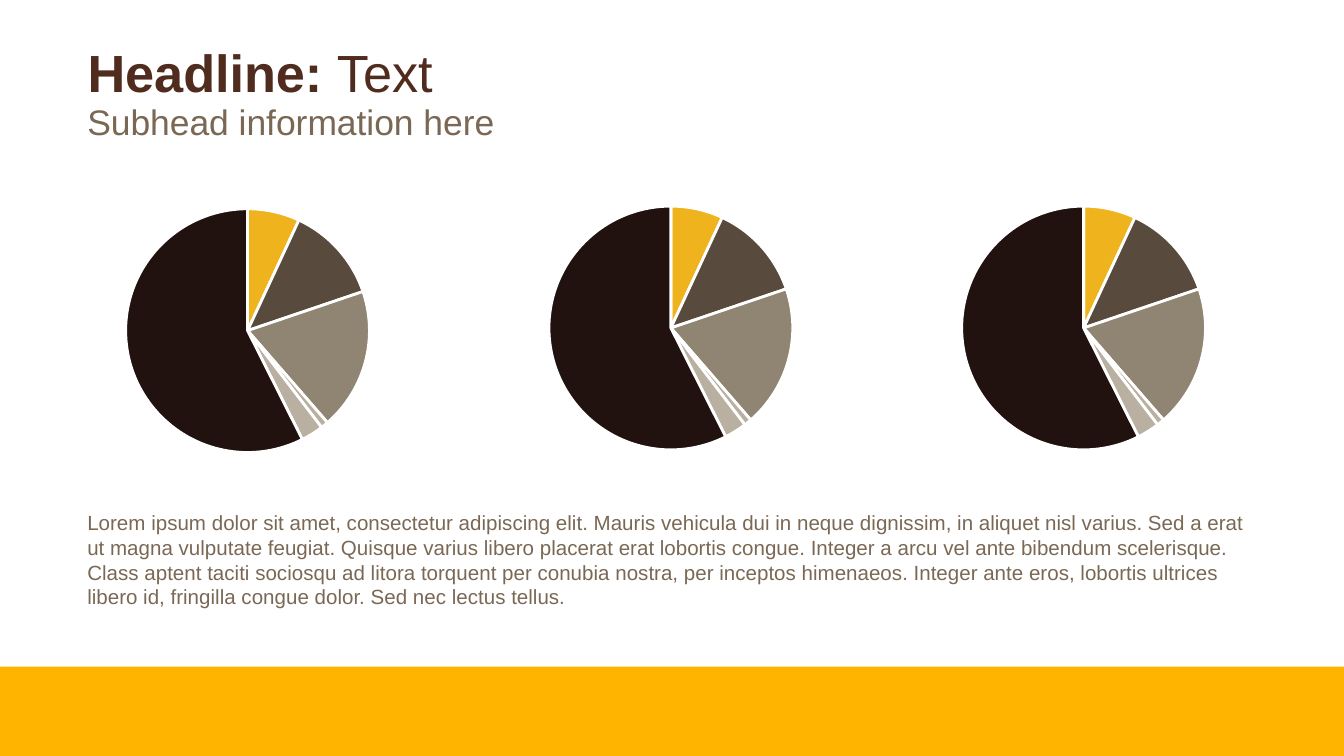
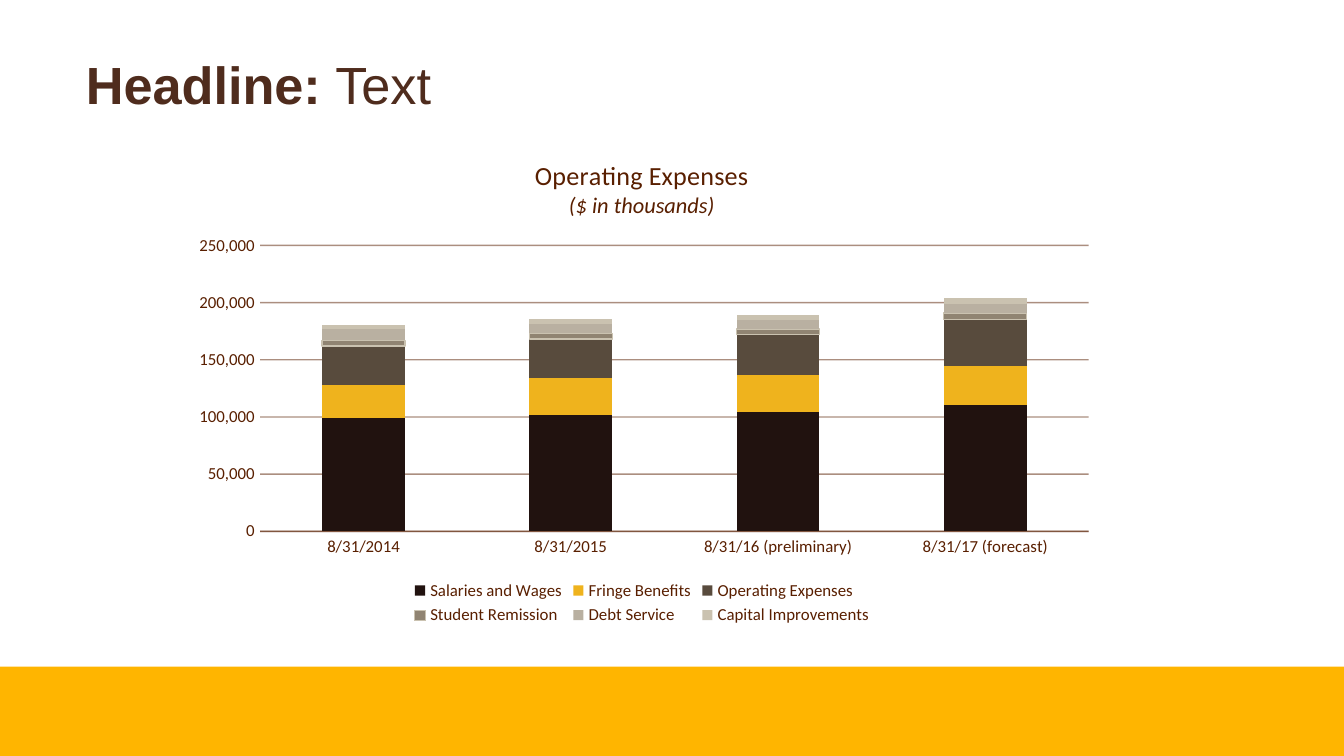
from lxml import etree
from pptx import Presentation
from pptx import util as u
from pptx.chart.data import CategoryChartData
from pptx.dml.color import RGBColor
from pptx.enum import chart as ec, shapes, text
from pptx.oxml.ns import qn

BLACK = RGBColor(0, 0, 0)
WHITE = RGBColor(255, 255, 255)
GOLD = RGBColor(0xFF, 0xB5, 0x00)
BROWN = RGBColor(0x4F, 0x2C, 0x1D)
TAUPE = RGBColor(0x7A, 0x68, 0x55)
RUST = RGBColor(0x59, 0x1F, 0x00)
INK = RGBColor(0x21, 0x12, 0x0F)
AMBER = RGBColor(0xEF, 0xB3, 0x1D)
BARK = RGBColor(0x58, 0x4B, 0x3D)
STONE = RGBColor(0x90, 0x84, 0x72)
SAND = RGBColor(0xB9, 0xB0, 0xA1)
CREAM = RGBColor(0xCA, 0xC2, 0xB0)

LOREM = (
    "Lorem ipsum dolor sit amet, consectetur adipiscing elit. Mauris vehicula dui in neque "
    "dignissim, in aliquet nisl varius. Sed a erat ut magna vulputate feugiat. Quisque varius "
    "libero placerat erat lobortis congue. Integer a arcu vel ante bibendum scelerisque. Class "
    "aptent taciti sociosqu ad litora torquent per conubia nostra, per inceptos himenaeos. "
    "Integer ante eros, lobortis ultrices libero id, fringilla congue dolor. Sed nec lectus tellus."
)
SHARES = [7, 13, 19, 1, 3, 58]
HUES = [AMBER, BARK, STONE, SAND, SAND, INK]
YEARS = ["8/31/2014", "8/31/2015", "8/31/16 (preliminary)", "8/31/17 (forecast)"]
COSTS = [
    ("Salaries and Wages", [99000, 102000, 104000, 110000], INK),
    ("Fringe Benefits", [29000, 32000, 33000, 35000], AMBER),
    ("Operating Expenses", [34000, 34000, 35000, 40000], BARK),
    ("Student Remission", [5000, 5000, 5000, 6000], STONE),
    ("Debt Service", [10000, 8000, 8000, 8000], SAND),
    ("Capital Improvements", [3000, 5000, 4000, 5000], CREAM),
]


def cm(box):
    return [u.Cm(n) for n in box]


def style(font, size, color, face="Arial", bold=False, slant=False):
    font.size, font.name = u.Pt(size), face
    font.bold, font.italic = bold, slant
    font.color.rgb = color


def stroke(line, color, width):
    line.color.rgb = color
    line.width = u.Pt(width)


def place(node, spot, box, inner=False):
    for old in node.findall(qn("c:layout")):
        node.remove(old)
    lay = etree.Element(qn("c:layout"))
    hand = etree.SubElement(lay, qn("c:manualLayout"))
    parts = [("layoutTarget", "inner")] if inner else []
    parts += [("xMode", "edge"), ("yMode", "edge"), *zip("xywh", box)]
    for tag, val in parts:
        etree.SubElement(hand, qn("c:" + tag)).set("val", str(val))
    node.insert(spot, lay)


class Deck:
    """Holds the shared style and the slide being built."""

    def __init__(self):
        self.prs = Presentation()
        self.prs.slide_width, self.prs.slide_height = cm((25.4, 14.29))
        self.slide = None

    def add(self):
        self.slide = self.prs.slides.add_slide(self.prs.slide_layouts[5])

    def band(self):
        bar = self.slide.shapes.add_shape(
            shapes.MSO_SHAPE.RECTANGLE, *cm((0, 12.6, 25.4, 1.69)))
        bar.shadow.inherit = False
        bar.fill.solid()
        bar.fill.fore_color.rgb = GOLD
        bar.line.fill.background()
        bar.element.nvSpPr.cNvPr.set("id", "99")
        self.prs.slide_master.shapes.element.append(bar.element)

    def title(self, lead, rest, box):
        head = self.slide.shapes.title
        head.left, head.top, head.width, head.height = cm(box)
        frame = head.text_frame
        frame.auto_size = text.MSO_AUTO_SIZE.NONE
        frame.vertical_anchor = text.MSO_ANCHOR.TOP
        frame.margin_top = u.Cm(0.25)
        para = frame.paragraphs[0]
        para.alignment = text.PP_ALIGN.LEFT
        for words, bold in ((lead, True), (rest, False)):
            run = para.add_run()
            run.text = words
            style(run.font, 28, BROWN, bold=bold)

    def note(self, words, size, box, top=0.13, base=0.13, pitch=None,
             anchor=text.MSO_ANCHOR.TOP):
        frame = self.slide.shapes.add_textbox(*cm(box)).text_frame
        frame.word_wrap = True
        frame.vertical_anchor = anchor
        frame.margin_top, frame.margin_bottom = cm((top, base))
        para = frame.paragraphs[0]
        para.text = words
        if pitch:
            para.line_spacing = u.Pt(pitch)
        style(para.font, size, TAUPE)

    def chart(self, kind, cats, rows, box, size):
        data = CategoryChartData(number_format="#,##0")
        data.categories = cats
        for name, vals in rows:
            data.add_series(name, vals)
        chart = self.slide.shapes.add_chart(kind, *cm(box), data).chart
        style(chart.font, size, BLACK, "Calibri")
        chart.has_title = chart.has_legend = False
        return chart

    def pie(self, box):
        chart = self.chart(ec.XL_CHART_TYPE.PIE, list("123456"),
                           [("Series 1", SHARES)], box, 12)
        plot = chart.plots[0]
        plot.vary_by_categories = True
        for i, hue in enumerate(HUES):
            look = plot.series[0].points[i].format
            look.fill.solid()
            look.fill.fore_color.rgb = hue
            stroke(look.line, WHITE, 1.5)
        place(chart.element.chart.plotArea, 0, (0.17, 0.07, 0.65, 0.87), True)

    def stack(self, box):
        chart = self.chart(ec.XL_CHART_TYPE.COLUMN_STACKED, YEARS,
                           [row[:2] for row in COSTS], box, 10)
        plot = chart.plots[0]
        plot.gap_width, plot.overlap = 150, 100
        plot.vary_by_categories = False
        for bar, (name, vals, hue) in zip(plot.series, COSTS):
            bar.format.fill.solid()
            bar.format.fill.fore_color.rgb = hue
            if hue == STONE:
                stroke(bar.format.line, CREAM, 0.75)
        self.axes(chart)
        self.labels(chart)
        place(chart.element.chart.plotArea, 0, (0.09, 0.22, 0.89, 0.58), True)

    def axes(self, chart):
        cat, val = chart.category_axis, chart.value_axis
        for axis in (cat, val):
            axis.major_tick_mark = axis.minor_tick_mark = ec.XL_TICK_MARK.NONE
            style(axis.tick_labels.font, 9, RUST, "Calibri")
        stroke(cat.format.line, RUST, 0.75)
        val.format.line.fill.background()
        val.minimum_scale, val.maximum_scale, val.major_unit = 0, 250000, 50000
        val.tick_labels.number_format = "#,##0"
        val.tick_labels.number_format_is_linked = False
        val.has_major_gridlines = True
        stroke(val.major_gridlines.format.line, RUST, 0.75)
        for tag in ("c:catAx", "c:valAx"):
            for line in chart.element.find(".//" + qn(tag)).iter(qn("a:ln")):
                for tint in line.iter(qn("a:srgbClr")):
                    etree.SubElement(tint, qn("a:alpha")).set("val", "50000")

    def labels(self, chart):
        frame = chart.chart_title.text_frame
        frame.text = "Operating Expenses\n($ in thousands)"
        for para, size, slant in zip(frame.paragraphs, (14, 12), (False, True)):
            style(para.font, size, RUST, "Calibri", slant=slant)
            style(para.runs[0].font, size, RUST, "Calibri", slant=slant)
        chart.has_legend = True
        chart.legend.position = ec.XL_LEGEND_POSITION.BOTTOM
        chart.legend.include_in_layout = False
        style(chart.legend.font, 9, RUST, "Calibri")
        place(chart.element.find(".//" + qn("c:legend")), 1, (0.25, 0.89, 0.5, 0.11))


def main():
    deck = Deck()
    deck.add()
    deck.band()
    deck.title("Headline: ", "Text", (1.4, 0.51, 21.46, 2.39))
    deck.note("Subhead information here", 19, (1.4, 1.7, 8.94, 1.07), top=0.2)
    for left, top in ((1.17, 3.56), (9.17, 3.51), (16.97, 3.51)):
        deck.pie((left, top, 7.09, 5.33))
    deck.note(LOREM, 11, (1.4, 9.53, 22.66, 2.59), base=0.62, pitch=13.2,
              anchor=text.MSO_ANCHOR.MIDDLE)
    deck.add()
    deck.title("Headline: ", "Text", (1.37, 0.74, 20.19, 1.57))
    deck.stack((3.33, 2.59, 17.6, 9.32))
    deck.prs.save("out.pptx")


if __name__ == "__main__":
    main()
